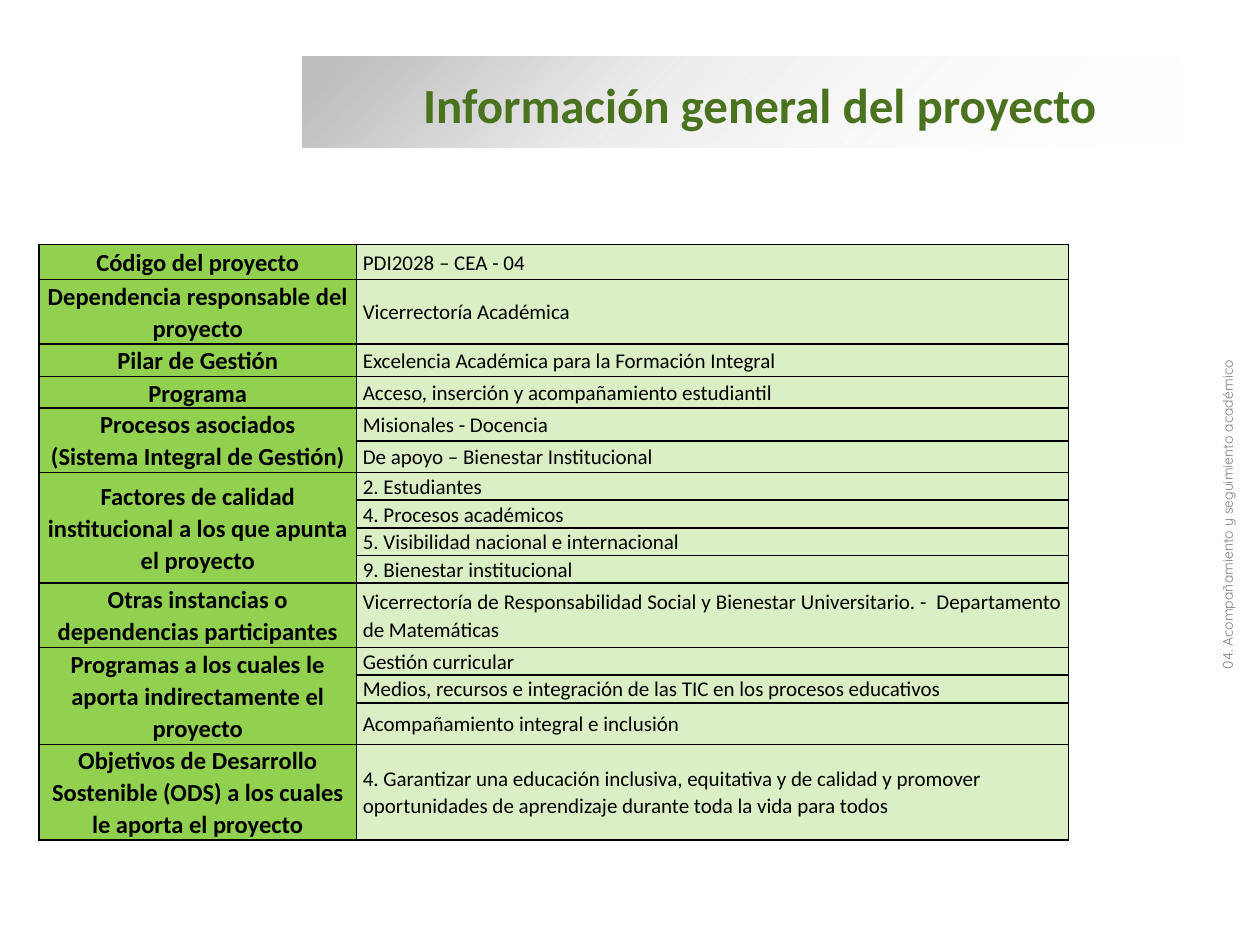
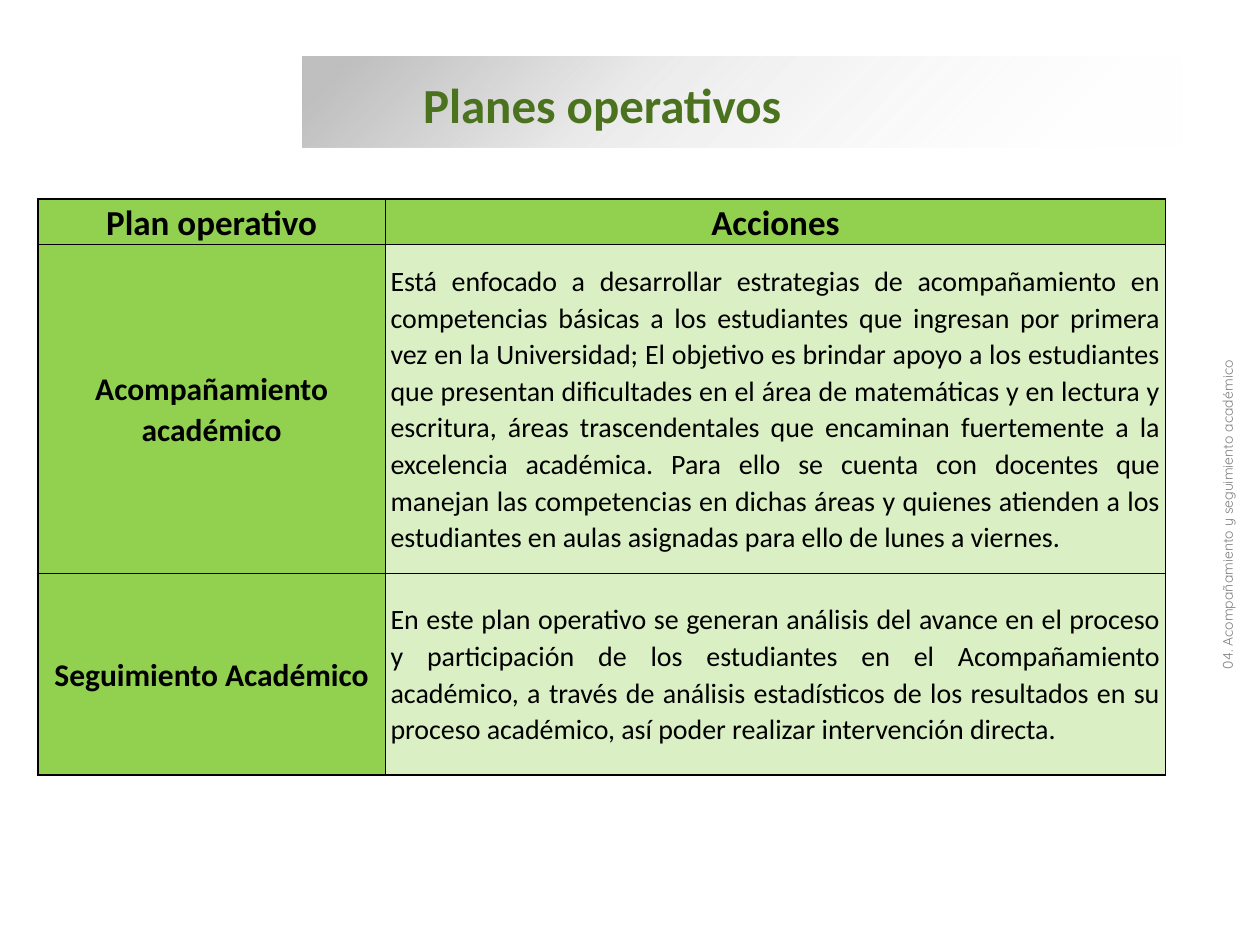
from pptx import Presentation
from pptx.dml.color import RGBColor
from pptx.enum.shapes import MSO_SHAPE
from pptx.enum.text import MSO_ANCHOR, MSO_AUTO_SIZE, PP_ALIGN
from pptx.oxml import parse_xml
from pptx.oxml.ns import nsdecls
from pptx.util import Inches, Pt

RECT = MSO_SHAPE.RECTANGLE
MIDDLE = MSO_ANCHOR.MIDDLE
GROW = MSO_AUTO_SIZE.SHAPE_TO_FIT_TEXT
LEFT, CENTER, JUSTIFY = PP_ALIGN.LEFT, PP_ALIGN.CENTER, PP_ALIGN.JUSTIFY

BLACK = RGBColor(0x00, 0x00, 0x00)
WHITE = RGBColor(0xFF, 0xFF, 0xFF)
GRAY = RGBColor(0x80, 0x80, 0x80)
SILVER = RGBColor(0xBF, 0xBF, 0xBF)
TITLE_GREEN = RGBColor(0x4B, 0x73, 0x1F)
LABEL_GREEN = RGBColor(0x92, 0xD0, 0x50)
VALUE_GREEN = RGBColor(0xDA, 0xEF, 0xC3)

BODY_FONT, SIDE_FONT = "Calibri", "Quicksand"
SIDE_TEXT = "04. Acompañamiento y seguimiento académico"
BAND_STOPS = [(5, SILVER, 100), (37, SILVER, 31), (100, WHITE, 0)]
BAND_BOX = (2.4, 0.45, 6.98, 0.72)
SIDE_BOX = (7.39, 3.9, 4.84, 0.37)

PROJECT_BOX = (0.31, 1.94, 8.17, 4.7)
PROJECT = [
    ("Código del proyecto", [("PDI2028 – CEA - 04", 0.28)]),
    ("Dependencia responsable del proyecto", [("Vicerrectoría Académica", 0.51)]),
    ("Pilar de Gestión", [("Excelencia Académica para la Formación Integral", 0.26)]),
    ("Programa", [("Acceso, inserción y acompañamiento estudiantil", 0.25)]),
    ("Procesos asociados\v(Sistema Integral de Gestión)",
     [("Misionales - Docencia", 0.26), ("De apoyo – Bienestar Institucional", 0.25)]),
    ("Factores de calidad institucional a los que apunta el proyecto",
     [("2. Estudiantes", 0.22), ("4. Procesos académicos", 0.22),
      ("5. Visibilidad nacional e internacional", 0.22),
      ("9. Bienestar institucional", 0.22)]),
    ("Otras instancias o dependencias participantes",
     [("Vicerrectoría de Responsabilidad Social y Bienestar Universitario. -  "
       "Departamento de Matemáticas", 0.51)]),
    ("Programas a los cuales le aporta indirectamente el proyecto",
     [("Gestión curricular", 0.22),
      ("Medios, recursos e integración de las TIC en los procesos educativos", 0.22),
      ("Acompañamiento integral e inclusión", 0.33)]),
    ("Objetivos de Desarrollo Sostenible (ODS) a los cuales le aporta el proyecto",
     [("4. Garantizar una educación inclusiva, equitativa y de calidad y promover "
       "oportunidades de aprendizaje durante toda la vida para todos", 0.76)]),
]

PLANS_BOX = (0.3, 1.58, 8.95, 4.57)
PLANS_HEADER = ("Plan operativo", "Acciones")
PLANS = [
    ("Acompañamiento académico",
     "Está enfocado a desarrollar estrategias de acompañamiento en competencias "
     "básicas a los estudiantes que ingresan por primera vez en la Universidad; El "
     "objetivo es brindar apoyo a los estudiantes que presentan dificultades en el "
     "área de matemáticas y en lectura y escritura, áreas trascendentales que "
     "encaminan fuertemente a la excelencia académica. Para ello se cuenta con "
     "docentes que manejan las competencias en dichas áreas y quienes atienden a los "
     "estudiantes en aulas asignadas para ello de lunes a viernes."),
    ("Seguimiento Académico",
     "En este plan operativo se generan análisis del avance en el proceso y "
     "participación de los estudiantes en el Acompañamiento académico, a través de "
     "análisis estadísticos de los resultados en su proceso académico, así poder "
     "realizar intervención directa."),
]


def style_font(font, name, size, color, bold=False):
    """Set the look of a font."""
    font.name, font.size, font.bold = name, Pt(size), bold
    font.color.rgb = color


def fill_band(sp):
    """Give a shape the diagonal fading fill."""
    stops = "".join(
        f'<a:gs pos="{pos * 1000}"><a:srgbClr val="{color}">'
        f'<a:alpha val="{alpha * 1000}"/></a:srgbClr></a:gs>'
        for pos, color, alpha in BAND_STOPS)
    sp._element.spPr.insert(2, parse_xml(
        f'<a:gradFill {nsdecls("a")} rotWithShape="1"><a:gsLst>{stops}</a:gsLst>'
        '<a:lin ang="2700000" scaled="0"/></a:gradFill>'))


def add_text(shapes, box, text, align, font):
    """Add a wrapped one-paragraph text box that fits its text."""
    sp = shapes.add_textbox(*map(Inches, box))
    tf = sp.text_frame
    tf.word_wrap, tf.auto_size = True, GROW
    p = tf.paragraphs[0]
    p.text, p.alignment = text, align
    style_font(p.font, *font)
    return sp


def add_title(slide, box, title):
    """Group the fading band with the title over it."""
    x, y, w, h = box
    shapes = slide.shapes.add_group_shape().shapes
    band = shapes.add_shape(RECT, *map(Inches, box))
    band.shadow.inherit = False
    band.line.fill.background()
    fill_band(band)
    sp = add_text(shapes, (x + 0.86, y + 0.09, 6.2, 0.57), title, LEFT,
                  (BODY_FONT, 28, TITLE_GREEN, True))
    sp.text_frame.vertical_anchor = MIDDLE


def add_side_label(slide, box):
    """Add the vertical project name at the right edge."""
    sp = add_text(slide.shapes, box, SIDE_TEXT, CENTER, (SIDE_FONT, 8, GRAY))
    sp.rotation = 270


def add_grid(slide, box, heights, label_width):
    """Add a plain two-column table."""
    table = slide.shapes.add_table(len(heights), 2, *map(Inches, box)).table
    table.first_row = table.horz_banding = False
    for col, width in zip(table.columns, (label_width, box[2] - label_width)):
        col.width = Inches(width)
    for row, height in zip(table.rows, heights):
        row.height = Inches(height)
    for cell in table.iter_cells():
        tcPr = cell._tc.get_or_add_tcPr()
        for side in "LRTB":
            tcPr.append(parse_xml(
                f'<a:ln{side} {nsdecls("a")} w="12700"><a:solidFill>'
                f'<a:srgbClr val="{BLACK}"/></a:solidFill></a:ln{side}>'))
    return table


def set_cell(cell, text, size, label=False, align=LEFT, inset=0.04):
    """Write a bold centred label or a plain value into a cell."""
    cell.fill.solid()
    cell.fill.fore_color.rgb = LABEL_GREEN if label else VALUE_GREEN
    cell.vertical_anchor = MIDDLE
    cell.margin_left = cell.margin_right = Inches(inset)
    cell.margin_top = cell.margin_bottom = 0
    cell.text = text
    p = cell.text_frame.paragraphs[0]
    p.alignment = CENTER if label else align
    p.line_spacing = 1.07
    style_font(p.font, BODY_FONT, size, BLACK, label)


def add_project_table(slide, box):
    """List the project data, one merged label per group of values."""
    heights = [height for _, values in PROJECT for _, height in values]
    table = add_grid(slide, box, heights, 2.52)
    row = 0
    for label, values in PROJECT:
        first = table.cell(row, 0)
        if len(values) > 1:
            first.merge(table.cell(row + len(values) - 1, 0))
        set_cell(first, label, 14, label=True)
        for value, _ in values:
            align = JUSTIFY if label.startswith("Otras") else LEFT
            set_cell(table.cell(row, 1), value, 12, align=align, inset=0.05)
            row += 1


def add_plans_table(slide, box):
    """List the operating plans and their actions."""
    table = add_grid(slide, box, (0.36, 2.61, 1.6), 2.76)
    for col, text in enumerate(PLANS_HEADER):
        set_cell(table.cell(0, col), text, 20, label=True)
    for row, (plan, actions) in enumerate(PLANS, 1):
        set_cell(table.cell(row, 0), plan, 18, label=True)
        set_cell(table.cell(row, 1), actions, 16, align=JUSTIFY)


def add_slide(prs, title, add_table, box):
    """Add a slide with title, table and side label."""
    slide = prs.slides.add_slide(prs.slide_layouts[6])
    add_title(slide, BAND_BOX, title)
    add_table(slide, box)
    add_side_label(slide, SIDE_BOX)


def main():
    """Build and save the presentation."""
    prs = Presentation()
    prs.slide_width, prs.slide_height = Inches(10), Inches(7.5)
    add_slide(prs, "Información general del proyecto", add_project_table, PROJECT_BOX)
    add_slide(prs, "Planes operativos", add_plans_table, PLANS_BOX)
    prs.save("out.pptx")


if __name__ == "__main__":
    main()
